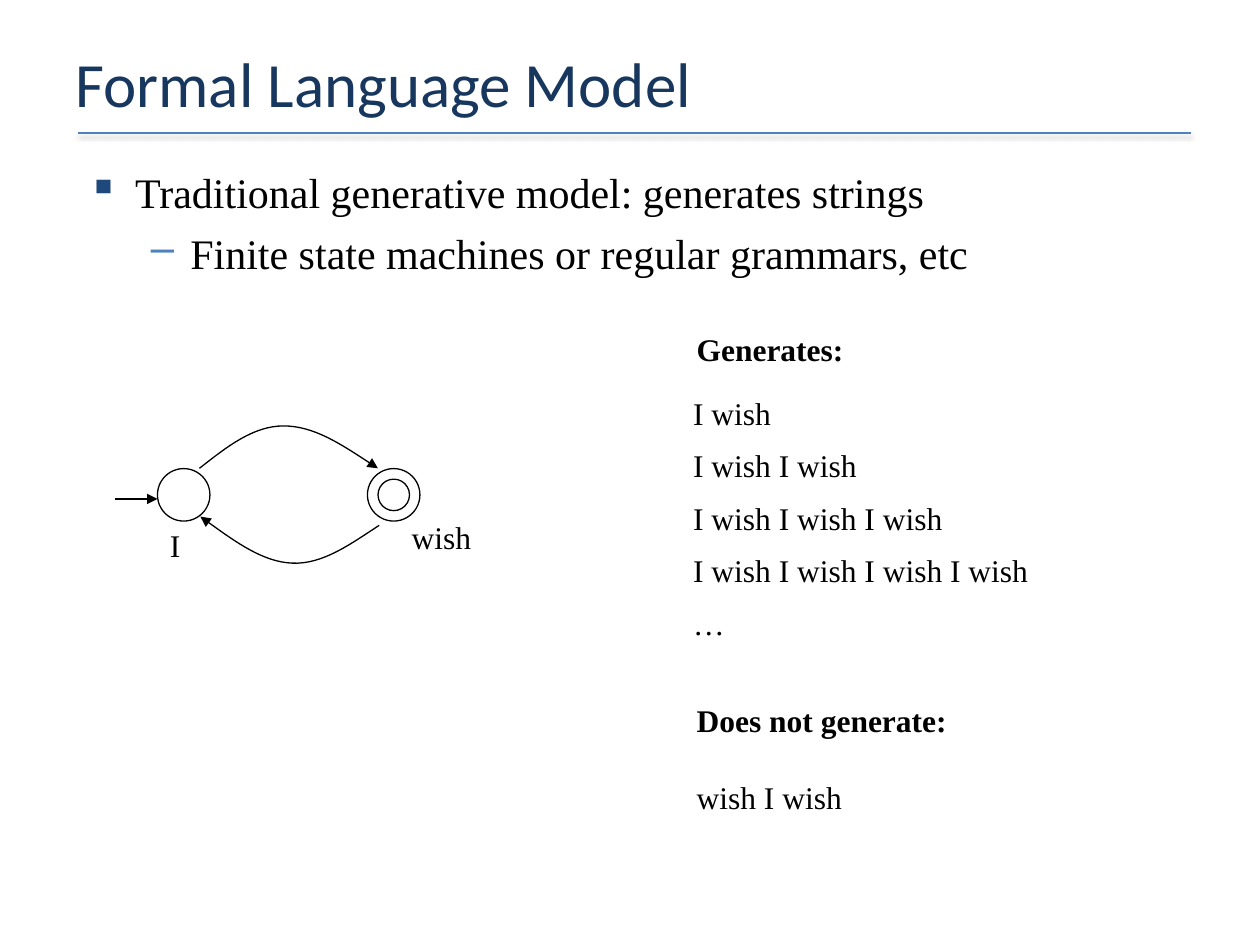
from lxml.etree import SubElement
from pptx import Presentation
from pptx.dml.color import RGBColor
from pptx.enum.shapes import MSO_CONNECTOR, MSO_SHAPE
from pptx.enum.text import MSO_ANCHOR
from pptx.oxml.ns import qn
from pptx.util import Pt

COLORS = {"title": "17375E", "rule": "4F81BD", "bullet": "1F497D",
          "dash": "4F81BD", "ink": "000000"}
TITLE = {"name": "Calibri", "size": Pt(36)}
BODY = {"name": "Times New Roman", "size": Pt(24)}
LABEL = {"name": "Times New Roman", "size": Pt(18)}
HEADING = {**LABEL, "bold": True}


def rgb(key):
    return RGBColor.from_string(COLORS[key])


def add_run(p, text, fmt, color="ink"):
    r = p.add_run()
    r.text = text
    for name, value in fmt.items():
        setattr(r.font, name, value)
    r.font.color.rgb = rgb(color)


def add_text(s, box, text, fmt, color="ink", anchor=MSO_ANCHOR.TOP):
    tf = s.shapes.add_textbox(*map(Pt, box)).text_frame
    tf.word_wrap = True
    tf.vertical_anchor = anchor
    add_run(tf.paragraphs[0], text, fmt, color)
    return tf


def style_line(sp, color="ink", width=0.75, arrow=False):
    sp.line.color.rgb = rgb(color)
    sp.line.width = Pt(width)
    if arrow:
        SubElement(sp.line._get_or_add_ln(), qn("a:tailEnd"), type="triangle")


def add_line(s, start, end, **style):
    sp = s.shapes.add_connector(MSO_CONNECTOR.STRAIGHT, *map(Pt, start + end))
    style_line(sp, **style)
    return SubElement(sp._element.spPr, qn("a:effectLst"))


def add_circle(s, x, y, size):
    sp = s.shapes.add_shape(MSO_SHAPE.OVAL, *map(Pt, (x, y, size, size)))
    sp.shadow.inherit = False
    sp.fill.background()
    style_line(sp)


def add_curve(s, points):
    start, *rest = [(Pt(x), Pt(y)) for x, y in points]
    builder = s.shapes.build_freeform(*start)
    builder.add_line_segments(rest, close=False)
    sp = builder.convert_to_shape()
    sp.shadow.inherit = False
    sp.fill.background()
    style_line(sp, arrow=True)
    segments = list(sp._element.iter(qn("a:lnTo")))
    outline = segments[0].getparent()
    for i in range(0, len(segments), 3):
        bezier = SubElement(outline, qn("a:cubicBezTo"))
        for segment in segments[i:i + 3]:
            bezier.append(segment[0])
            outline.remove(segment)


def add_title(s, left, top, width, height):
    add_text(s, (left, top, width, height), "Formal Language Model", TITLE,
             "title", MSO_ANCHOR.MIDDLE)
    y = top + height + 3.2
    effects = add_line(s, (left + 8.6, y), (left + width - 3.6, y),
                       color="rule", width=1)
    shadow = SubElement(effects, qn("a:outerShdw"), blurRad=str(Pt(3.1)),
                        dist=str(Pt(1.6)), dir="5400000", rotWithShape="0")
    black = SubElement(shadow, qn("a:srgbClr"), val=COLORS["ink"])
    SubElement(black, qn("a:alpha"), val="38000")


def add_bullet(p, char, color, margin, indent):
    pPr = p._p.get_or_add_pPr()
    pPr.set("marL", str(Pt(margin)))
    pPr.set("indent", str(Pt(-indent)))
    fill = SubElement(pPr, qn("a:buClr"))
    SubElement(fill, qn("a:srgbClr"), val=COLORS[color])
    SubElement(pPr, qn("a:buChar"), char=char)


def add_body(s, left, top, width, height):
    tf = add_text(s, (left, top, width, height),
                  "Traditional generative model: generates strings", BODY)
    first, second = tf.paragraphs[0], tf.add_paragraph()
    add_run(second, "Finite state machines or regular grammars, etc", BODY)
    second.level = 1
    first.space_before, second.space_before = Pt(3), Pt(6)
    add_bullet(first, "▪", "bullet", 27, 27)
    add_bullet(second, "–", "dash", 58.5, 22.5)


def add_automaton(s, left, top):
    state, inset = 30, 6
    y = top + 24.8
    start, accept = left + 24, left + 144
    add_circle(s, start, y, state)
    add_circle(s, accept, y, state)
    add_circle(s, accept + inset, y + inset, state - 2 * inset)
    add_line(s, (left, y + 17.3), (start, y + 17.3), arrow=True)
    forward = [(48, 24.6), (63.6, 12.4), (78.7, 0.4), (96, 0.4),
               (113.3, 0.4), (131.3, 12.4), (150, 24.6)]
    back = [(150.7, 57.2), (134.2, 68), (118.3, 79.6), (101, 78.8),
            (84.5, 78.1), (66.5, 65.2), (48.5, 52.2)]
    for curve in (forward, back):
        add_curve(s, [(left + dx, top + dy) for dx, dy in curve])
    add_text(s, (start, top + 53.9, 24, 36), "I", LABEL)
    add_text(s, (left + 162.2, top + 49.6, 60, 36), "wish", LABEL)


def add_strings(s, left, top, width):
    add_text(s, (left + 2, top, width, 29), "Generates:", HEADING)
    strings = [" ".join(["I wish"] * n) for n in range(1, 5)] + ["…"]
    for i, text in enumerate(strings):
        add_text(s, (left, top + 36.4 + 30 * i, width, 36), text, LABEL)
    tf = add_text(s, (left + 2, top + 212, width, 73),
                  "Does not generate:", HEADING)
    p = tf.add_paragraph()
    p.space_before = Pt(22.5)
    add_run(p, "wish I wish", LABEL)


def main():
    prs = Presentation()
    prs.slide_width, prs.slide_height = Pt(720), Pt(540)
    s = prs.slides.add_slide(prs.slide_layouts[6])
    add_title(s, 36, 21.6, 648, 51)
    add_body(s, 43.2, 91.4, 612, 94)
    add_automaton(s, 66, 243)
    add_strings(s, 389, 185, 270)
    prs.save("out.pptx")


if __name__ == "__main__":
    main()
